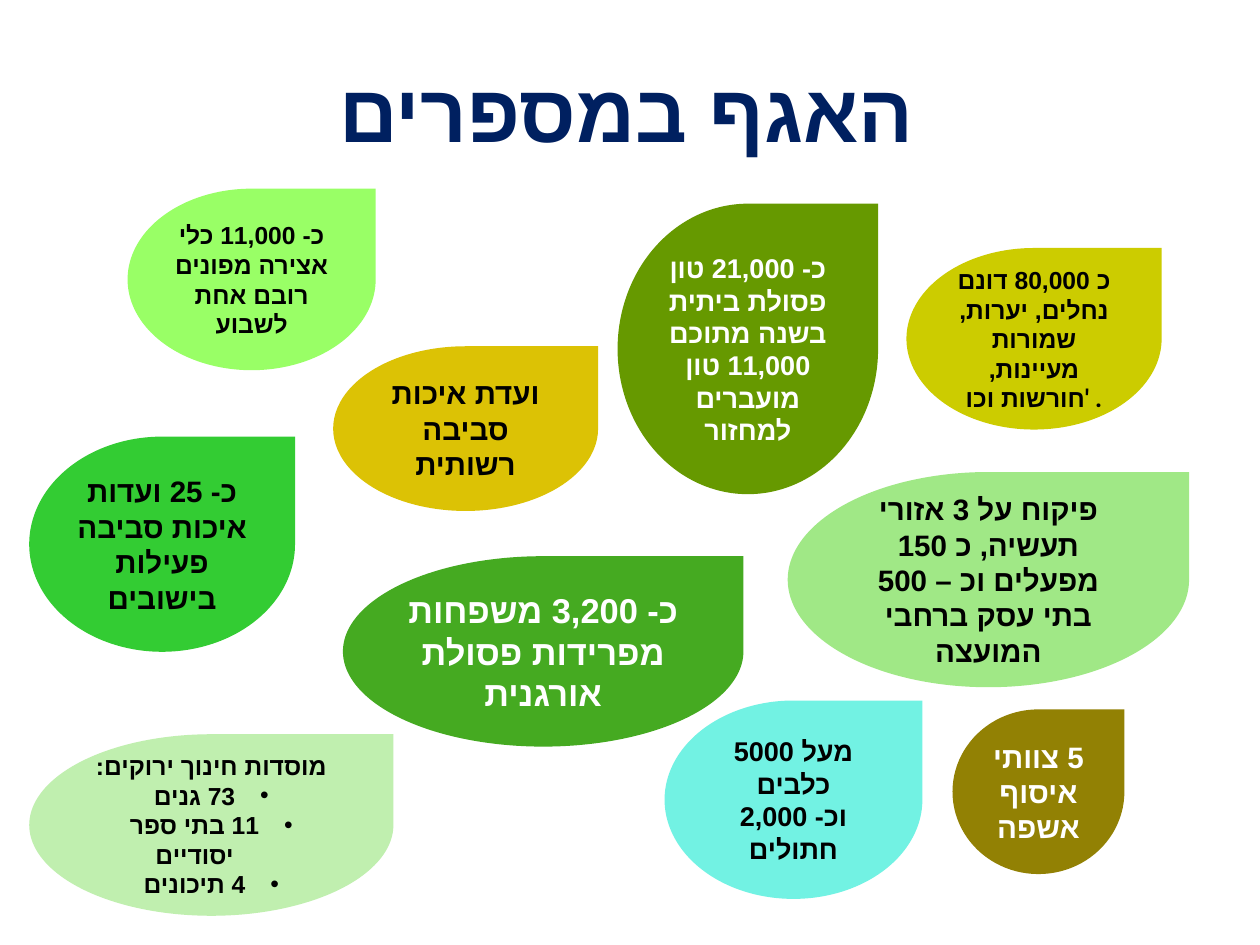
from dataclasses import dataclass

from lxml import etree
from pptx import Presentation
from pptx.dml.color import RGBColor
from pptx.enum.shapes import MSO_SHAPE
from pptx.enum.text import MSO_ANCHOR, MSO_AUTO_SIZE, PP_ALIGN
from pptx.oxml.ns import qn
from pptx.util import Pt

TEARDROP = MSO_SHAPE.TEAR
MIDDLE = MSO_ANCHOR.MIDDLE
CENTER = PP_ALIGN.CENTER
NO_AUTOFIT = MSO_AUTO_SIZE.NONE
TITLE_ONLY = 5
EMU_PER_PX = 9144


@dataclass(frozen=True)
class Theme:
    title_font: str = "Arial"
    fact_font: str = "Roboto"
    hebrew_font: str = "Arial"
    navy: str = "002060"
    black: str = "000000"
    white: str = "FFFFFF"
    olive_yellow: str = "CCCC00"
    pale_green: str = "C0EFAF"
    bronze: str = "928104"
    moss: str = "669900"
    leaf: str = "45AA21"
    gold: str = "DCC205"
    soft_green: str = "A0E886"
    bright_green: str = "33CC33"
    lime: str = "99FF66"
    turquoise: str = "72F2E3"
    title: int = 66
    large: int = 28
    medium: int = 24
    regular: int = 22
    small: int = 20


class FactSlide:
    """Draws a title and teardrop facts on one slide in a shared style."""

    def __init__(self, deck, theme):
        self.theme = theme
        self.slide = deck.slides.add_slide(deck.slide_layouts[TITLE_ONLY])

    def px(self, length):
        return length * EMU_PER_PX

    def frame(self, holder):
        frame = holder.text_frame
        frame.word_wrap = True
        frame.auto_size = NO_AUTOFIT
        frame.vertical_anchor = MIDDLE
        frame.margin_left = frame.margin_right = self.px(6)
        frame.margin_top = frame.margin_bottom = self.px(6)
        return frame

    def bullet(self, paragraph):
        properties = paragraph._p.get_or_add_pPr()
        properties.set("marL", str(self.px(38)))
        properties.set("indent", str(self.px(-38)))
        etree.SubElement(properties, qn("a:buFont")).set("typeface", self.theme.hebrew_font)
        etree.SubElement(properties, qn("a:buChar")).set("char", "•")

    def add_words(self, paragraph, words, font, size, color):
        paragraph.alignment = CENTER
        run = paragraph.add_run()
        run.text = words
        run.font.name = font
        run.font.size = Pt(size)
        run.font.bold = True
        run.font.color.rgb = RGBColor.from_string(color)
        script_font = etree.SubElement(run._r.get_or_add_rPr(), qn("a:cs"))
        script_font.set("typeface", self.theme.hebrew_font)

    def title(self, words, left, top, width, height):
        heading = self.slide.shapes.title
        heading.left, heading.top = self.px(left), self.px(top)
        heading.width, heading.height = self.px(width), self.px(height)
        theme = self.theme
        self.add_words(self.frame(heading).paragraphs[0], words,
                       theme.title_font, theme.title, theme.navy)

    def fact(self, box, fill, size, color, lines, rtl=False, bulleted=False):
        drop = self.slide.shapes.add_shape(TEARDROP, *map(self.px, box))
        drop.shadow.inherit = False
        drop.fill.solid()
        drop.fill.fore_color.rgb = RGBColor.from_string(fill)
        drop.line.fill.background()
        frame = self.frame(drop)
        for index, words in enumerate(lines):
            paragraph = frame.add_paragraph() if index else frame.paragraphs[0]
            if rtl:
                paragraph._p.get_or_add_pPr().set("rtl", "1")
            if bulleted and index:
                self.bullet(paragraph)
            self.add_words(paragraph, words, self.theme.fact_font, size, color)


def main():
    theme = Theme()
    deck = Presentation()
    deck.slide_width = 1422 * EMU_PER_PX
    deck.slide_height = 1067 * EMU_PER_PX
    department = FactSlide(deck, theme)
    department.title("האגף במספרים", 172, 65, 1070, 118)
    department.fact((1023, 280, 288, 205), theme.olive_yellow, theme.small, theme.black,
                    ["כ 80,000 דונם נחלים, יערות, שמורות מעיינות, חורשות וכו' ."])
    department.fact((33, 829, 411, 205), theme.pale_green, theme.small, theme.black,
                    ["מוסדות חינוך ירוקים:", "73 גנים", "11 בתי ספר יסודיים", "4 תיכונים"],
                    rtl=True, bulleted=True)
    department.fact((1075, 801, 194, 186), theme.bronze, theme.medium, theme.white,
                    ["5 צוותי איסוף אשפה"], rtl=True)
    department.fact((697, 230, 294, 328), theme.moss, theme.regular, theme.white,
                    ["כ- 21,000 טון פסולת ביתית בשנה מתוכם 11,000 טון מועברים למחזור"])
    department.fact((387, 628, 452, 215), theme.leaf, theme.large, theme.white,
                    ["כ- 3,200 משפחות מפרידות פסולת אורגנית"])
    department.fact((376, 391, 299, 186), theme.gold, theme.medium, theme.black,
                    ["ועדת איכות סביבה רשותית"])
    department.fact((889, 533, 453, 243), theme.soft_green, theme.medium, theme.black,
                    ["פיקוח על 3 אזורי תעשיה, כ 150 מפעלים וכ – 500 בתי עסק ברחבי המועצה"])
    department.fact((33, 493, 300, 243), theme.bright_green, theme.medium, theme.black,
                    ["כ- 25 ועדות איכות סביבה פעילות בישובים"])
    department.fact((144, 213, 280, 205), theme.lime, theme.small, theme.black,
                    ["כ- 11,000 כלי אצירה מפונים רובם אחת לשבוע"])
    department.fact((750, 791, 291, 224), theme.turquoise, theme.regular, theme.black,
                    ["מעל 5000", "כלבים", "וכ- 2,000", "חתולים"])
    deck.save("out.pptx")


if __name__ == "__main__":
    main()
